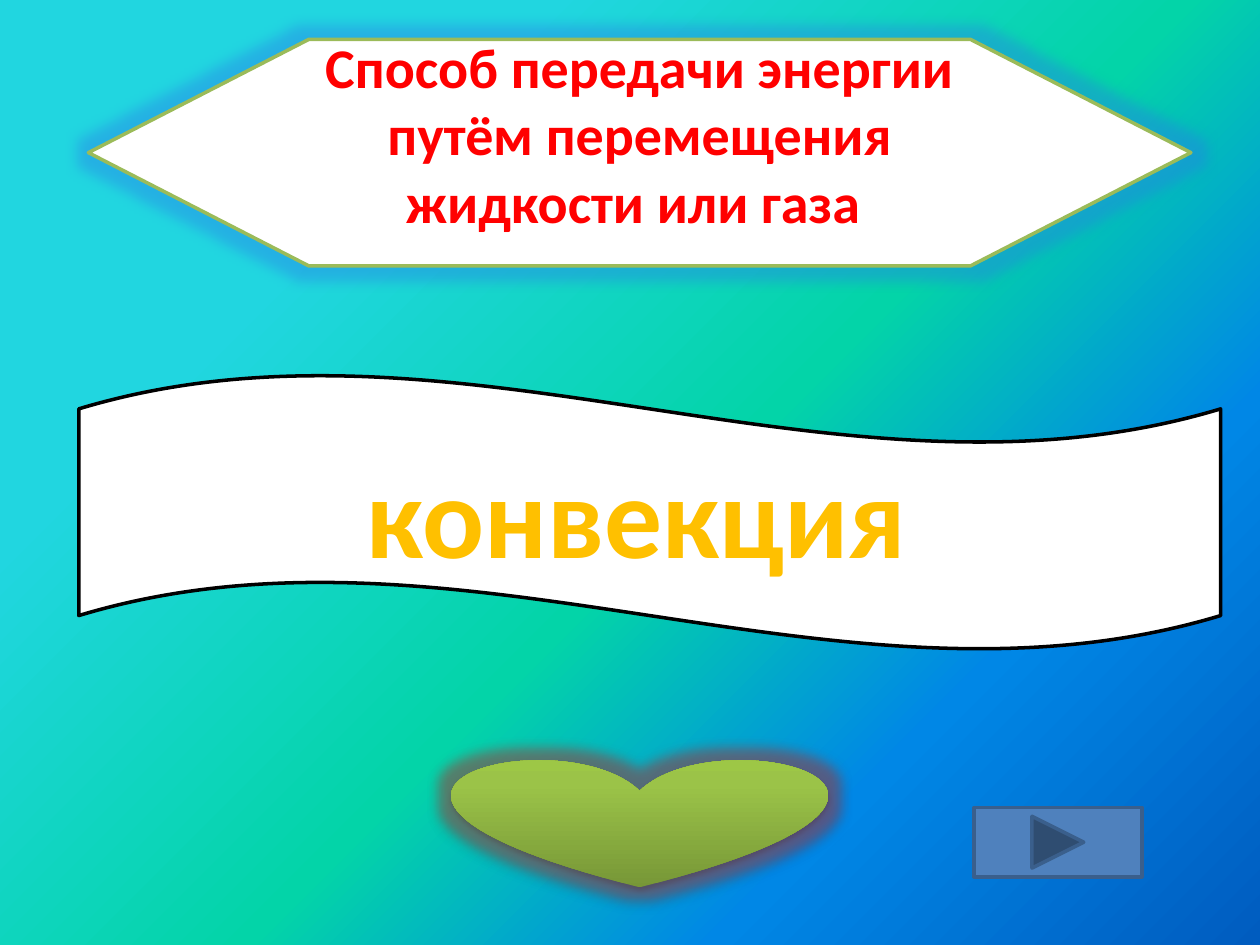
from lxml import etree
from pptx import Presentation
from pptx import util as u
from pptx.dml.color import RGBColor
from pptx.enum import shapes, text
from pptx.oxml.ns import qn

COLORS = {
    "white": "FFFFFF",
    "black": "000000",
    "question": "FF0000",
    "question_line": "9BBB59",
    "question_glow": "2A7BE8",
    "answer": "FFC000",
    "heart_glow": "D0302C",
    "button": "4F81BD",
    "button_line": "3A5F8C",
}
SKY_STOPS = [(25, "21D6E0"), (54, "03D4A8"), (75, "0087E6"), (100, "005CBF")]
HEART_STOPS = [(0, "779737"), (80, "9BC348"), (100, "9DC746")]


def rgb(name):
    return RGBColor.from_string(COLORS[name])


def set_gradient(fill, owner, stops, angle):
    """Fill with the given stops; the angle runs counterclockwise."""
    fill.gradient()
    fill.gradient_angle = angle
    stop_list = owner.find(".//" + qn("a:gsLst"))
    for stop in list(stop_list):
        stop_list.remove(stop)
    for position, color in stops:
        stop = etree.SubElement(stop_list, qn("a:gs"), pos=str(position * 1000))
        etree.SubElement(stop, qn("a:srgbClr"), val=color)


def add_effect(shape, tag, color, opacity, **attributes):
    effects = shape.element.spPr.find(qn("a:effectLst"))
    effect = etree.SubElement(effects, qn(tag), **attributes)
    tint = etree.SubElement(effect, qn("a:srgbClr"), val=COLORS[color])
    etree.SubElement(tint, qn("a:alpha"), val=str(opacity * 1000))


def add_glow(shape, color):
    add_effect(shape, "a:glow", color, 40, rad=str(u.Pt(14)))


def add_figure(slide, kind, box, fill=None, line=None):
    shape = slide.shapes.add_shape(kind, *(u.Pt(length) for length in box))
    shape.shadow.inherit = False
    if fill:
        shape.fill.solid()
        shape.fill.fore_color.rgb = rgb(fill)
    if line:
        shape.line.color.rgb = rgb(line)
        shape.line.width = u.Pt(2)
    else:
        shape.line.fill.background()
    return shape


def set_text(shape, content, size, color):
    frame = shape.text_frame
    frame.text = content
    frame.word_wrap = True
    frame.vertical_anchor = text.MSO_ANCHOR.MIDDLE
    paragraph = frame.paragraphs[0]
    paragraph.alignment = text.PP_ALIGN.CENTER
    font = paragraph.runs[0].font
    font.name = "Calibri"
    font.size = u.Pt(size)
    font.bold = True
    font.color.rgb = rgb(color)


def main():
    presentation = Presentation()
    presentation.slide_width, presentation.slide_height = u.Pt(720), u.Pt(540)
    slide = presentation.slides.add_slide(presentation.slide_layouts[6])
    set_gradient(slide.background.fill, slide.element, SKY_STOPS, 315)
    kinds = shapes.MSO_SHAPE

    # Heart
    heart = add_figure(slide, kinds.HEART, (258.5, 433.5, 214, 73.5))
    set_gradient(heart.fill, heart.element, HEART_STOPS, 90)
    add_glow(heart, "heart_glow")
    add_effect(heart, "a:outerShdw", "black", 35, blurRad=str(u.Pt(3.1)),
               dist=str(u.Pt(1.8)), dir="5400000", rotWithShape="0")

    # Question
    question = add_figure(slide, kinds.FLOWCHART_PREPARATION,
                          (50.5, 22.5, 630, 129.5), "white", "question_line")
    add_glow(question, "question_glow")
    set_text(question, "Способ передачи энергии путём перемещения жидкости или газа ",
             32, "question")
    question.text_frame.margin_top = u.Pt(0)
    question.text_frame.margin_bottom = u.Pt(22)

    # Answer
    answer = add_figure(slide, kinds.WAVE, (45, 214, 652.5, 157.5), "white", "black")
    set_text(answer, "конвекция ", 66, "answer")

    # Next button
    add_figure(slide, kinds.ACTION_BUTTON_FORWARD_OR_NEXT,
               (556.5, 461.5, 96, 39.5), "button", "button_line")

    presentation.save("out.pptx")


if __name__ == "__main__":
    main()
